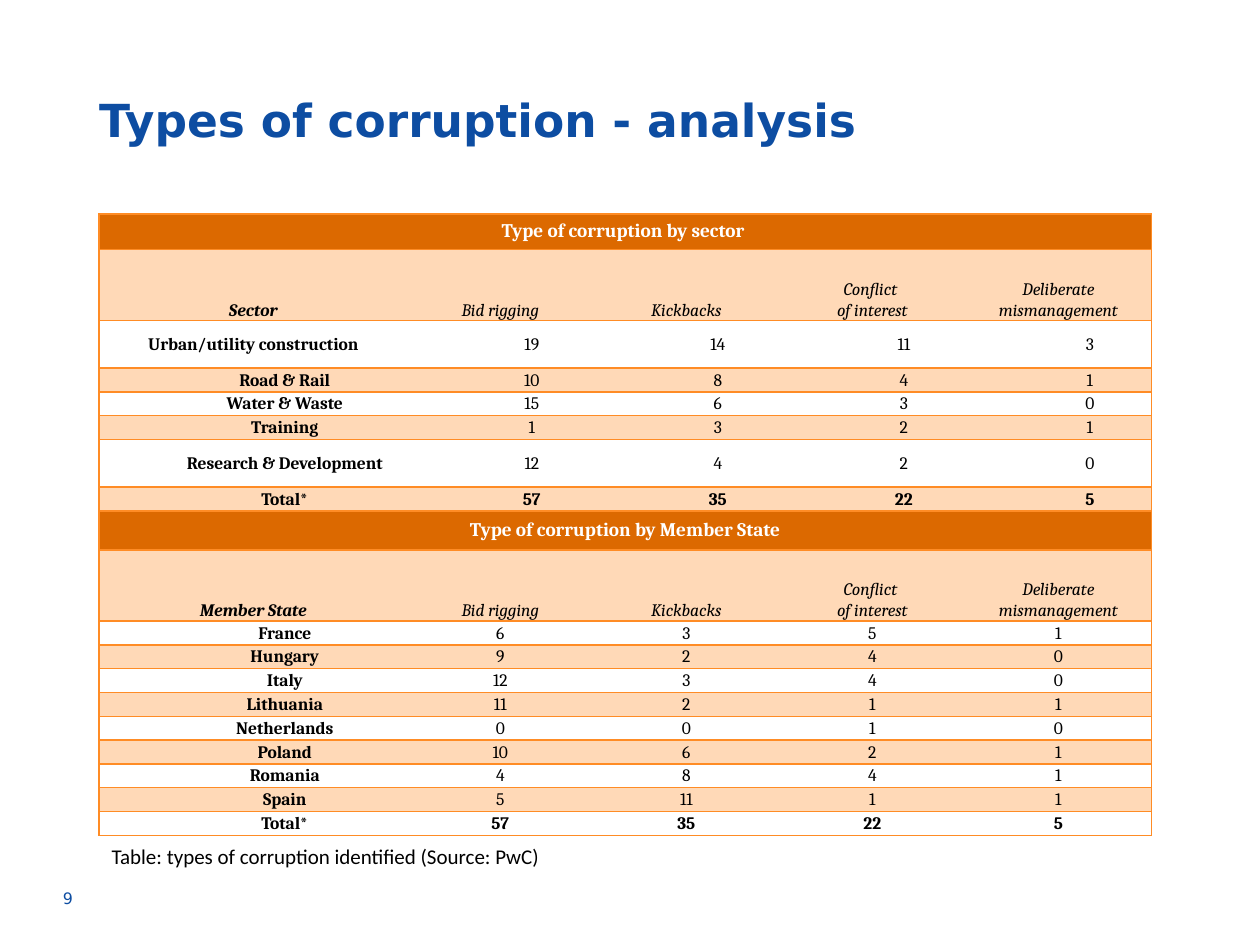
from dataclasses import dataclass

from lxml import etree
from pptx import Presentation
from pptx.dml.color import RGBColor
from pptx.enum.text import MSO_ANCHOR, PP_ALIGN
from pptx.oxml.ns import qn
from pptx.util import Cm, Pt

TOP, MIDDLE, BOTTOM = MSO_ANCHOR.TOP, MSO_ANCHOR.MIDDLE, MSO_ANCHOR.BOTTOM
LEFT, CENTER = PP_ALIGN.LEFT, PP_ALIGN.CENTER

COLORS = {
    "blue": "0D4DA2",
    "black": "000000",
    "white": "FFFFFF",
    "dark": "DC6900",
    "light": "FFD9B7",
    "line": "FF8C25",
}
PLAIN = "{2D5ABB26-0587-4C30-8999-92F81FD0307C}"  # table style without grid

EDGE = Cm(2)
INDENT = Cm(1.27)
PAD = {"margin_left": Cm(0.18), "margin_right": Cm(0.18),
       "margin_top": 0, "margin_bottom": 0}
NO_PAD = dict.fromkeys(PAD, 0)
WIDTHS = [6.21] + [3.75] * 4
KINDS = ["Bid rigging", "Kickbacks", "Conflict \vof interest",
         "Deliberate mismanagement"]


@dataclass
class Row:
    cells: list
    high: float = 0.48
    fill: str = "white"
    role: str = "body"
    inset: bool = False  # indent of the numbers
    label: bool = True   # indent of the row label
    total: bool = False


@dataclass
class Group:
    title: str
    head: str
    high: float
    rows: list
    inset: bool


GROUPS = [
    Group("Type of corruption by sector ", "Sector", 0.72, [
        ("Urban/utility construction", 19, 14, 11, 3),
        ("Road & Rail", 10, 8, 4, 1),
        ("Water & Waste", 15, 6, 3, 0),
        ("Training", 1, 3, 2, 1),
        ("Research & Development", 12, 4, 2, 0),
        ("Total*", 57, 35, 22, 5),
    ], True),
    Group("Type of corruption by Member State", "Member State", 0.79, [
        ("France", 6, 3, 5, 1),
        ("Hungary", 9, 2, 4, 0),
        ("Italy", 12, 3, 4, 0),
        ("Lithuania", 11, 2, 1, 1),
        ("Netherlands", 0, 0, 1, 0),
        ("Poland", 10, 6, 2, 1),
        ("Romania", 4, 8, 4, 1),
        ("Spain", 5, 11, 1, 1),
        ("Total*", 57, 35, 22, 5),
    ], False),
]
TALL = ("Urban/utility construction", "Research & Development")


def apply(item, values: dict) -> None:
    for name, value in values.items():
        setattr(item, name, value)


def style(para, face: str, size: float, color: str, **more) -> None:
    apply(para.font, {"name": face, "size": Pt(size), **more})
    para.font.color.rgb = RGBColor.from_string(COLORS[color])


def border(cell, sides: str) -> None:
    props = cell._tc.get_or_add_tcPr()
    for side in sides:
        line = etree.SubElement(props, qn(f"a:ln{side}"), w=str(Pt(1)))
        fill = etree.SubElement(line, qn("a:solidFill"))
        etree.SubElement(fill, qn("a:srgbClr"), val=COLORS["line"])


def expand(group: Group) -> list[Row]:
    rows = [Row([group.title], group.high, "dark", "banner"),
            Row([group.head, *KINDS], 1.43, "light", "head")]
    for i, cells in enumerate(group.rows):
        rows.append(Row(cells, 0.96 if cells[0] in TALL else 0.48,
                        "light" if i % 2 else "white", inset=group.inset,
                        label=cells[0] != TALL[0],
                        total=cells[0] == "Total*"))
    return rows


def fill_cell(cell, row: Row, col: int) -> None:
    banner, head = row.role == "banner", row.role == "head"
    border(cell, ("L" if col == 0 else "") + ("R" if col == 4 or banner else "") + "TB")
    cell.fill.solid()
    cell.fill.fore_color.rgb = RGBColor.from_string(COLORS[row.fill])
    apply(cell, {**PAD, "vertical_anchor": BOTTOM if head else MIDDLE})
    if col >= len(row.cells):
        return
    para = cell.text_frame.paragraphs[0]
    para.text = str(row.cells[col])
    apply(para, {"alignment": CENTER, "line_spacing": Pt(12),
                 "space_after": Pt(0 if banner else 2)})
    if row.role == "body" and (row.inset if col else row.label):
        para._p.get_or_add_pPr().set("marL", str(INDENT))
    style(para, "Cambria", 11 if banner else 10,
          "white" if banner else "black",
          bold=col == 0 or row.total, italic=head)


def add_grid(slide, rows: list[Row]) -> None:
    high = sum(row.high for row in rows)
    table = slide.shapes.add_table(len(rows), len(WIDTHS), EDGE, Cm(4.31),
                                   Cm(sum(WIDTHS)), Cm(high)).table
    apply(table, {"first_row": False, "horz_banding": False})
    table._tbl.tblPr.find(qn("a:tableStyleId")).text = PLAIN
    for col, wide in zip(table.columns, WIDTHS):
        col.width = Cm(wide)
    for r, row in enumerate(rows):
        table.rows[r].height = Cm(row.high)
        for c in range(len(WIDTHS)):
            fill_cell(table.cell(r, c), row, c)
        if row.role == "banner":
            table.cell(r, 0).merge(table.cell(r, len(WIDTHS) - 1))


def add_note(slide, text: str, box: tuple, face: str, size: float,
             color: str, pads: dict) -> None:
    frame = slide.shapes.add_textbox(*map(Cm, box)).text_frame
    apply(frame, {"word_wrap": True, **pads})
    para = frame.paragraphs[0]
    para.text = text
    style(para, face, size, color)


def main() -> None:
    deck = Presentation()
    apply(deck, {"slide_width": Cm(25.4), "slide_height": Cm(19.05)})
    slide = deck.slides.add_slide(deck.slide_layouts[5])

    # Title
    title = slide.shapes.title
    apply(title, {"left": EDGE, "top": Cm(1.85),
                  "width": Cm(22.86), "height": Cm(3.18)})
    apply(title.text_frame, {**NO_PAD, "vertical_anchor": TOP})
    para = title.text_frame.paragraphs[0]
    para.text = "Types of corruption - analysis"
    para.alignment = LEFT
    style(para, "DejaVu Sans", 26, "blue", bold=True)

    # Table
    add_grid(slide, [row for group in GROUPS for row in expand(group)])

    # Caption and page number
    add_note(slide, "Table: types of corruption identified (Source: PwC)",
             (2, 16.89, 17.07, 0.77), "Calibri", 12, "black", {})
    add_note(slide, "9", (1.27, 17.91, 5.92, 1.02), "DejaVu Sans", 9,
             "blue", NO_PAD)
    deck.save("out.pptx")


if __name__ == "__main__":
    main()
